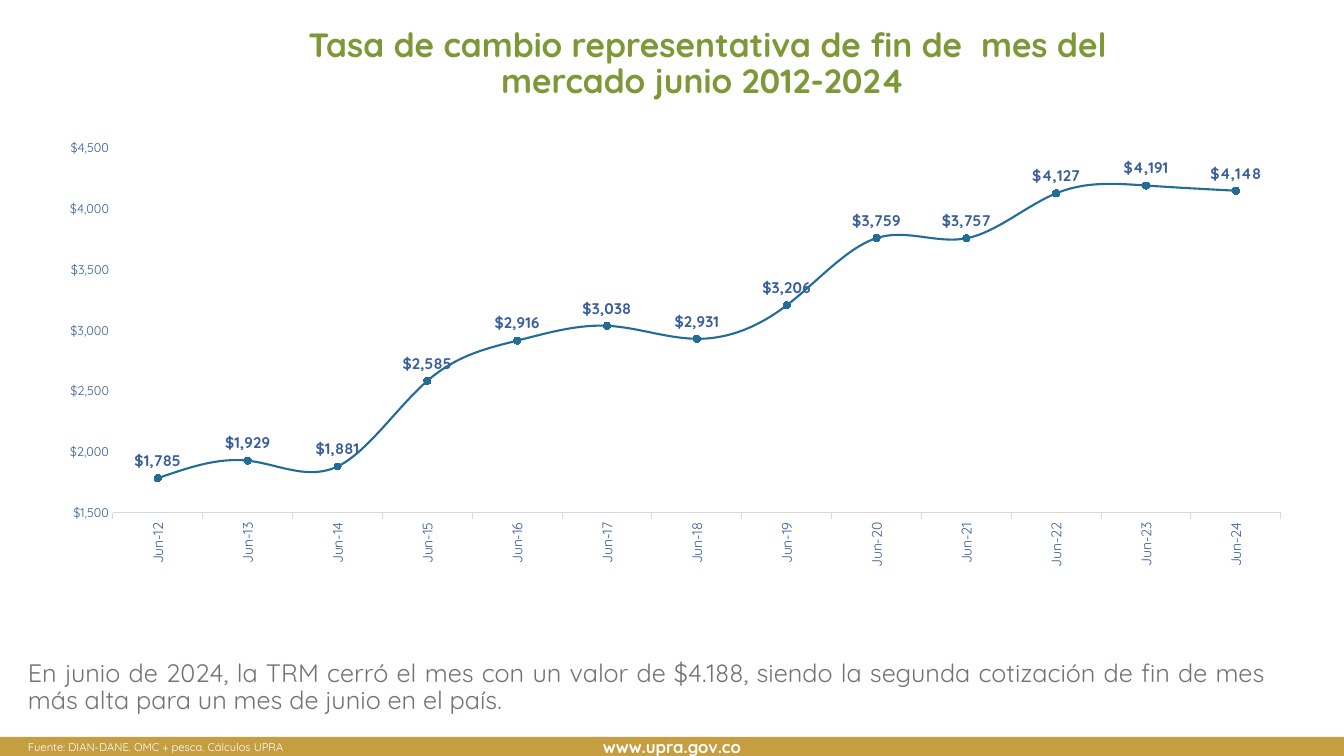
from dataclasses import dataclass

from lxml.etree import SubElement
from pptx import Presentation
from pptx.chart.data import CategoryChartData
from pptx.dml.color import RGBColor
from pptx.enum.chart import XL_CHART_TYPE, XL_LABEL_POSITION, XL_MARKER_STYLE, XL_TICK_MARK
from pptx.enum.shapes import MSO_SHAPE
from pptx.enum.text import MSO_ANCHOR, PP_ALIGN
from pptx.oxml.ns import qn
from pptx.util import Emu, Pt

GREEN = RGBColor(0x7D, 0x98, 0x37)
GOLD = RGBColor(0xC5, 0x9E, 0x41)
WHITE = RGBColor(0xFF, 0xFF, 0xFF)
GREY = RGBColor(0x76, 0x71, 0x71)
BLUE = RGBColor(0x39, 0x5F, 0x9B)
LINE_BLUE = RGBColor(0x23, 0x6C, 0x95)
AXIS_GREY = RGBColor(0xD9, 0xD9, 0xD9)

FONT = "Quicksand"
EMU_PER_PX = 914400 / 100.8
MONEY = '"$"#,##0'
FIRST_YEAR = 12
RATES = (1785, 1929, 1881, 2585, 2916, 3038, 2931, 3206, 3759, 3757, 4127, 4191, 4148)


@dataclass(frozen=True)
class Area:
    left: int
    top: int
    width: int
    height: int

    def emu(self) -> tuple:
        return tuple(px(n) for n in (self.left, self.top, self.width, self.height))


@dataclass(frozen=True)
class Caption:
    area: Area
    text: str
    size: int
    color: RGBColor
    align: PP_ALIGN
    bold: bool = False
    spacing: float = 1.0
    anchor: MSO_ANCHOR = MSO_ANCHOR.TOP


TITLE = Caption(Area(246, 23, 923, 108),
                "Tasa de cambio representativa de fin de  mes del mercado junio 2012-2024 ",
                24, GREEN, PP_ALIGN.CENTER, bold=True, spacing=0.9)
FOOTER = Caption(Area(0, 737, 1344, 19), "www.upra.gov.co",
                 12, WHITE, PP_ALIGN.CENTER, bold=True, anchor=MSO_ANCHOR.MIDDLE)
NOTES = (
    Caption(Area(18, 735, 1301, 24), "Fuente: DIAN-DANE. OMC + pesca. Cálculos UPRA",
            8, WHITE, PP_ALIGN.JUSTIFY),
    Caption(Area(18, 656, 1257, 62),
            "En junio de 2024, la TRM cerró el mes con un valor de $4.188, siendo la segunda "
            "cotización de fin de mes más alta para un mes de junio en el país.",
            18, GREY, PP_ALIGN.JUSTIFY, spacing=0.9),
)
CHART = Area(37, 131, 1268, 446)
PLOT = Area(113, 148, 1168, 365)


def px(count: int) -> Emu:
    return Emu(round(count * EMU_PER_PX))


def set_all(target, values: dict) -> None:
    for name, value in values.items():
        setattr(target, name, value)


def style_font(font, size: int, color: RGBColor, bold: bool = False) -> None:
    set_all(font, {"name": FONT, "size": Pt(size), "bold": bold})
    font.color.rgb = color


def write(shape, caption: Caption) -> None:
    left, top, width, height = caption.area.emu()
    set_all(shape, {"left": left, "top": top, "width": width, "height": height})
    frame = shape.text_frame
    set_all(frame, {"word_wrap": True, "vertical_anchor": caption.anchor})
    para = frame.paragraphs[0]
    set_all(para, {"alignment": caption.align, "line_spacing": caption.spacing,
                   "space_before": Pt(0)})
    span = para.add_run()
    span.text = caption.text
    style_font(span.font, caption.size, caption.color, caption.bold)


def add_footer(page) -> None:
    bar = page.shapes.add_shape(MSO_SHAPE.RECTANGLE, *FOOTER.area.emu())
    bar.shadow.inherit = False
    bar.fill.solid()
    bar.fill.fore_color.rgb = GOLD
    bar.line.fill.background()
    write(bar, FOOTER)


def place_plot(chart) -> None:
    plot_area = chart.plots[0]._element.getparent()
    layout = plot_area.find(qn("c:layout"))
    if layout is None:
        layout = SubElement(plot_area, qn("c:layout"))
        plot_area.insert(0, layout)
    manual = SubElement(layout, qn("c:manualLayout"))
    settings = {
        "layoutTarget": "inner", "xMode": "edge", "yMode": "edge",
        "x": round((PLOT.left - CHART.left) / CHART.width, 4),
        "y": round((PLOT.top - CHART.top) / CHART.height, 4),
        "w": round(PLOT.width / CHART.width, 4),
        "h": round(PLOT.height / CHART.height, 4),
    }
    for name, value in settings.items():
        SubElement(manual, qn(f"c:{name}")).set("val", str(value))


def style_axes(chart) -> None:
    months, pesos = chart.category_axis, chart.value_axis
    set_all(months, {"has_major_gridlines": False, "major_tick_mark": XL_TICK_MARK.OUTSIDE})
    months.format.line.color.rgb = AXIS_GREY
    months.format.line.width = Pt(0.75)
    style_font(months.tick_labels.font, 10, BLUE)
    # Month labels read upwards
    body = months._element.find(qn("c:txPr")).find(qn("a:bodyPr"))
    body.set("rot", "-5400000")
    body.set("vert", "horz")

    set_all(pesos, {"has_major_gridlines": False, "major_tick_mark": XL_TICK_MARK.NONE,
                    "minimum_scale": 1500, "maximum_scale": 4500, "major_unit": 500})
    pesos.format.line.fill.background()
    set_all(pesos.tick_labels, {"number_format": MONEY, "number_format_is_linked": False})
    style_font(pesos.tick_labels.font, 9, BLUE)


def style_series(series) -> None:
    series.smooth = True
    series.format.line.color.rgb = LINE_BLUE
    series.format.line.width = Pt(1.5)
    marker = series.marker
    set_all(marker, {"style": XL_MARKER_STYLE.CIRCLE, "size": 5})
    marker.format.fill.solid()
    marker.format.fill.fore_color.rgb = LINE_BLUE
    marker.format.line.color.rgb = LINE_BLUE
    labels = series.data_labels
    set_all(labels, {"show_value": True, "position": XL_LABEL_POSITION.ABOVE,
                     "number_format": MONEY, "number_format_is_linked": False})
    style_font(labels.font, 11, BLUE, bold=True)


def add_rate_chart(page) -> None:
    data = CategoryChartData(number_format=MONEY)
    data.categories = [f"Jun-{FIRST_YEAR + index}" for index in range(len(RATES))]
    data.add_series("Series 1", RATES)
    chart = page.shapes.add_chart(XL_CHART_TYPE.LINE_MARKERS, *CHART.emu(), data).chart
    set_all(chart, {"has_legend": False, "has_title": False})
    style_font(chart.font, 10, BLUE)
    chart.plots[0].vary_by_categories = False
    place_plot(chart)
    style_axes(chart)
    style_series(chart.plots[0].series[0])


def main() -> None:
    deck = Presentation()
    set_all(deck, {"slide_width": px(1344), "slide_height": px(756)})
    page = deck.slides.add_slide(deck.slide_layouts.get_by_name("Title Only"))

    # Title and footer bar
    write(page.shapes.title, TITLE)
    add_footer(page)

    # Source line and closing statement
    for note in NOTES:
        write(page.shapes.add_textbox(*note.area.emu()), note)

    # Exchange rate chart
    add_rate_chart(page)
    deck.save("out.pptx")


if __name__ == "__main__":
    main()
